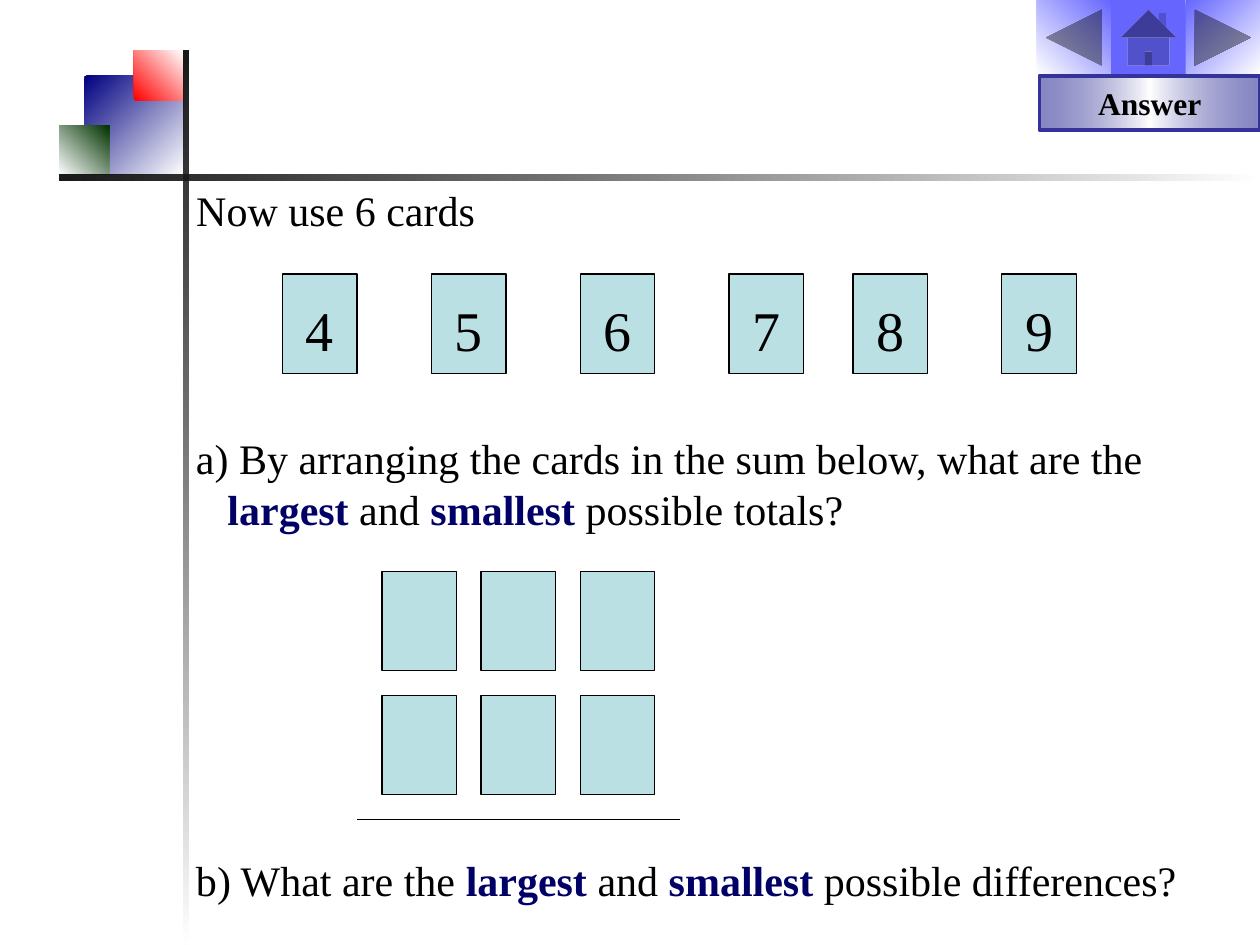
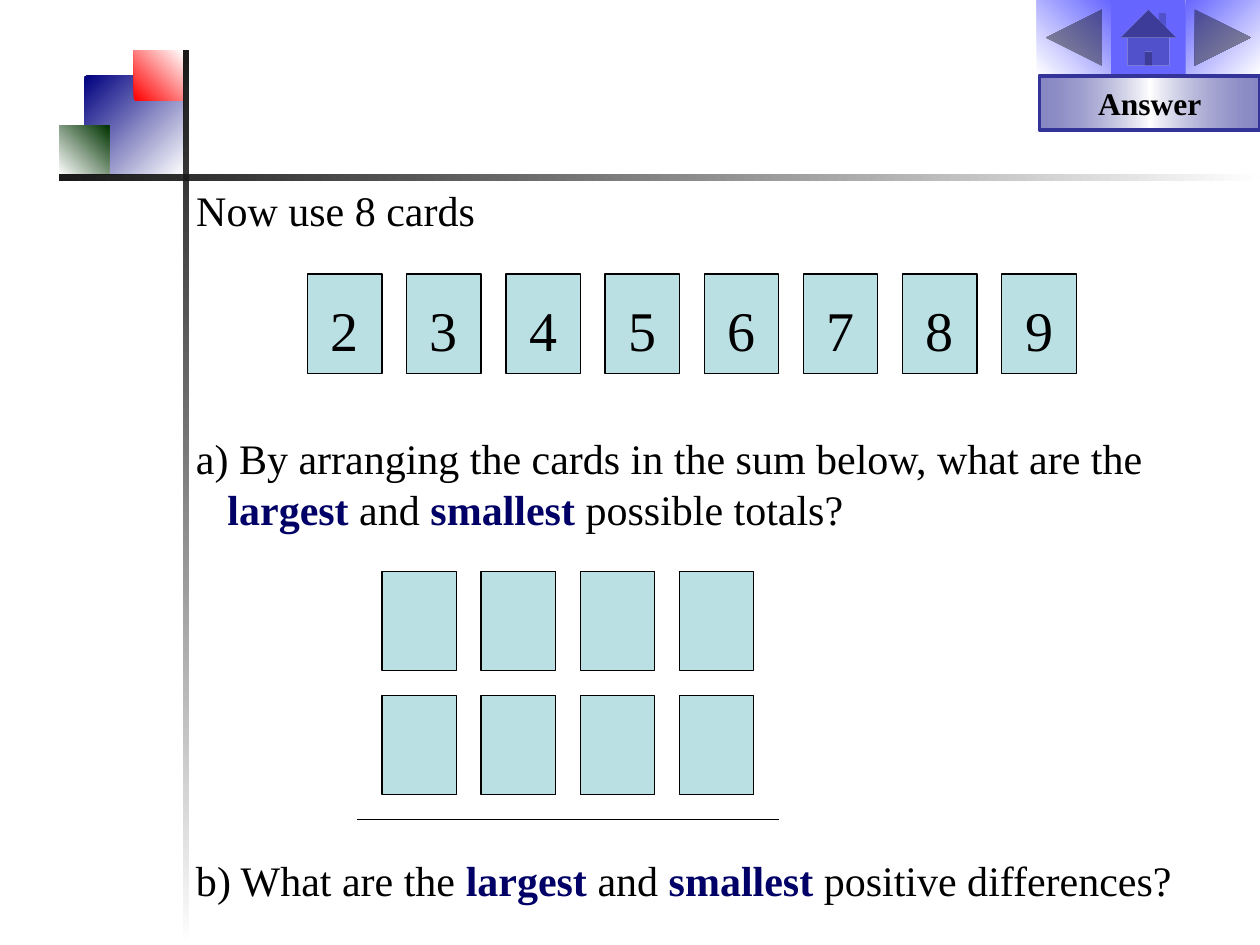
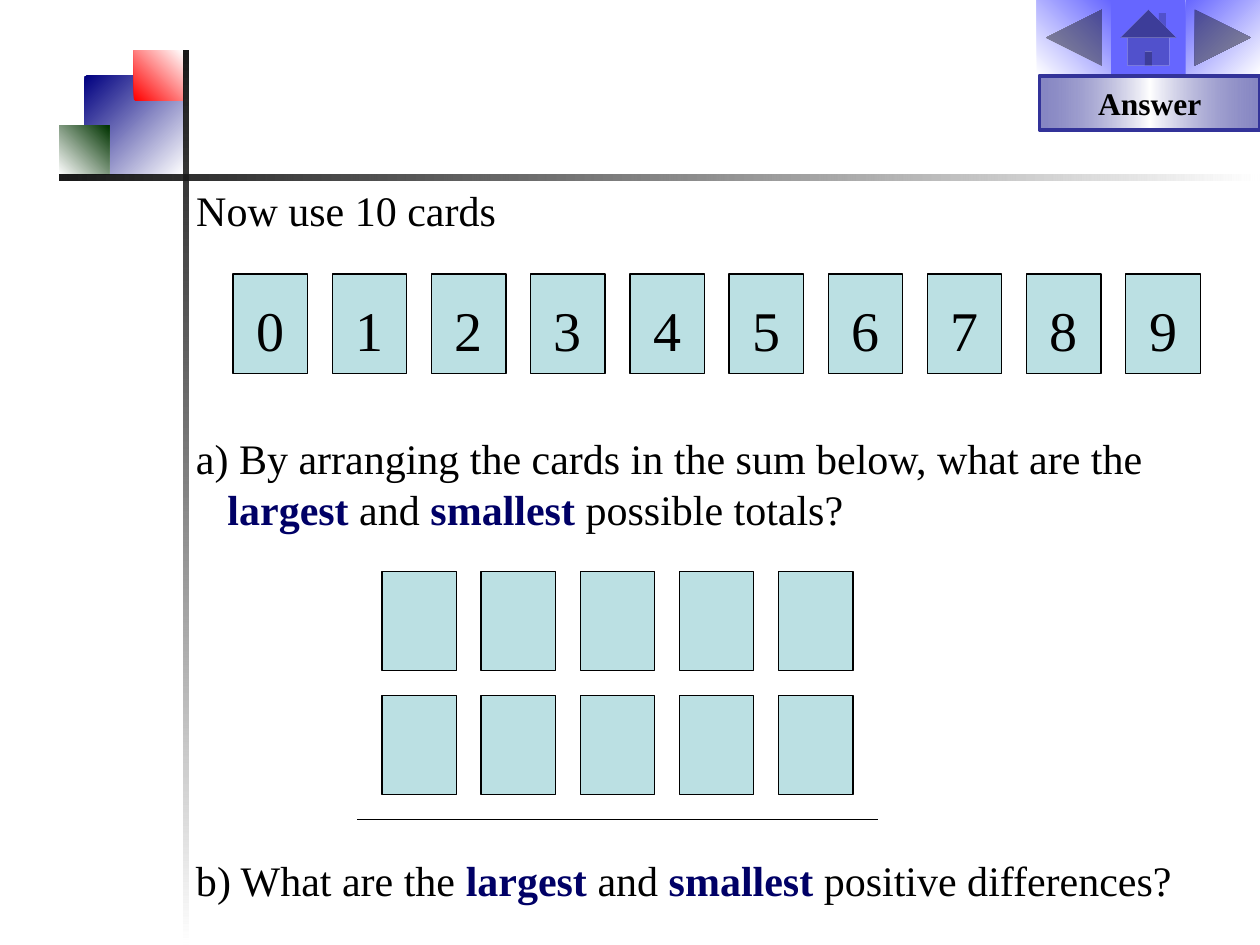
from dataclasses import dataclass

from lxml import etree
from pptx import Presentation, util as u
from pptx.dml.color import RGBColor
from pptx.enum import shapes, text
from pptx.oxml.ns import qn


@dataclass(frozen=True)
class Theme:
    """Colours, type sizes and the grid that all slides share."""
    font: str = "Times New Roman"
    ink: str = "000000"
    paper: str = "FFFFFF"
    emphasis: str = "000066"
    card: str = "BBE0E3"
    navy: str = "000080"
    red: str = "FF0000"
    green: str = "003300"
    navigation: str = "6666FF"
    answer: str = "333399"
    body_size: int = 24
    digit_size: int = 32
    button_size: int = 18
    hairline: float = 0.75
    unit: float = 14.17
    width: int = 720
    height: int = 540
    axis_x: float = 104.9
    axis_y: float = 99.94


THEME = Theme()
UNIT = THEME.unit
CARD_WIDTH, CARD_HEIGHT, CARD_PITCH, ROW_PITCH = 3 * UNIT, 4 * UNIT, 4 * UNIT, 5 * UNIT
KIND = shapes.MSO_SHAPE
TOTALS = "a) By arranging the cards in the sum below, what are the *largest* and *smallest* possible totals?"
DIFFERENCES = "b) What are the *largest* and *smallest* {} differences?"
TASKS = [
    (range(4, 10), [4, 10, 16, 22, 27, 33], "possible"),
    (range(2, 10), range(5, 37, 4), "positive"),
    (range(10), range(2, 42, 4), "positive"),
]


def write(frame, content, size=THEME.body_size, align=text.PP_ALIGN.LEFT, bold=False,
          anchor=text.MSO_ANCHOR.TOP, top=5.6, hang=0):
    """Write one paragraph, with the words between asterisks emphasised."""
    frame.word_wrap = True
    frame.auto_size = text.MSO_AUTO_SIZE.NONE
    frame.vertical_anchor = anchor
    frame.margin_left = frame.margin_right = u.Pt(7.2)
    frame.margin_top, frame.margin_bottom = u.Pt(top), u.Pt(3.6)
    paragraph = frame.paragraphs[0]
    paragraph.alignment = align
    if hang:
        properties = paragraph._p.get_or_add_pPr()
        properties.set("marL", str(u.Pt(hang)))
        properties.set("indent", str(-u.Pt(hang)))
    for index, part in enumerate(content.split("*")):
        emphasised = index % 2 == 1
        run = paragraph.add_run()
        run.text = part
        run.font.name = THEME.font
        run.font.size = u.Pt(size)
        run.font.bold = bold or emphasised
        run.font.color.rgb = RGBColor.from_string(THEME.emphasis if emphasised else THEME.ink)


def paint_gradient(shape, stops, angle):
    """Fill a shape with (position, colour, opacity) stops at an angle in degrees."""
    shape.fill.gradient()
    gradient = shape.element.spPr.find(qn("a:gradFill"))
    for child in list(gradient):
        gradient.remove(child)
    stop_list = etree.SubElement(gradient, qn("a:gsLst"))
    for position, colour, opacity in stops:
        stop = etree.SubElement(stop_list, qn("a:gs"), pos=str(position * 1000))
        tint = etree.SubElement(stop, qn("a:srgbClr"), val=colour)
        if opacity < 100:
            etree.SubElement(tint, qn("a:alpha"), val=str(opacity * 1000))
    etree.SubElement(gradient, qn("a:lin"), ang=str(angle * 60000), scaled="0")


def add_block(slide, left, top, width, height, kind=KIND.RECTANGLE, fill=None,
              stops=None, angle=0, line=None, weight=THEME.hairline):
    """Add a flat preset shape with a solid or gradient fill."""
    block = slide.shapes.add_shape(kind, u.Pt(left), u.Pt(top), u.Pt(width), u.Pt(height))
    block.shadow.inherit = False
    if stops:
        paint_gradient(block, stops, angle)
    else:
        block.fill.solid()
        block.fill.fore_color.rgb = RGBColor.from_string(fill)
    if line:
        block.line.color.rgb = RGBColor.from_string(line)
        block.line.width = u.Pt(weight)
    else:
        block.line.fill.background()
    return block


def draw_axes(slide, x, y):
    """Draw the three squares and the two fading bars around their crossing."""
    squares = [
        (-4, -4, 4, THEME.navy, THEME.paper, 45),
        (-2, -5, 2, THEME.red, THEME.paper, 315),
        (-5, -2, 2, THEME.paper, THEME.green, 315),
    ]
    parts = [add_block(slide, x + column * UNIT, y + row * UNIT, side * UNIT, side * UNIT,
                       stops=[(0, start, 100), (100, end, 100)], angle=angle)
             for column, row, side, start, end, angle in squares]
    fade = [(0, THEME.ink, 90), (100, THEME.paper, 100)]
    bar_top, bar_left = y - 5 * UNIT, x - 5 * UNIT
    parts.append(add_block(slide, x, bar_top, 3, THEME.height - bar_top, stops=fade, angle=90))
    parts.append(add_block(slide, bar_left, y, THEME.width - bar_left, 3, stops=fade))
    return parts


def draw_navigation(slide, right, top):
    """Draw the back, next and home buttons against the right edge."""
    side = 3 * UNIT
    back = [(0, THEME.paper, 100), (100, THEME.navigation, 100)]
    forward = [(0, THEME.navigation, 100), (100, THEME.paper, 100)]
    buttons = [
        (3, KIND.ACTION_BUTTON_BACK_OR_PREVIOUS, back, 315),
        (1, KIND.ACTION_BUTTON_FORWARD_OR_NEXT, forward, 45),
        (2, KIND.ACTION_BUTTON_HOME, None, 0),
    ]
    return [add_block(slide, right - place * side, top, side, 43, kind,
                      fill=THEME.navigation, stops=stops, angle=angle)
            for place, kind, stops, angle in buttons]


def move_to_layout(parts, layout):
    """Move drawn parts behind the placeholders of a layout."""
    for index, part in enumerate(parts):
        part.element.xpath("./p:nvSpPr/p:cNvPr")[0].set("id", str(100 + index))
        layout.shapes.element.insert(2 + index, part.element)


def add_question(slide, content, left, top, width, height, hang=0):
    """Add a question in a text box."""
    question = slide.shapes.add_textbox(u.Pt(left), u.Pt(top), u.Pt(width), u.Pt(height))
    write(question.text_frame, content, hang=hang)


def add_card(slide, left, top, digit=None):
    """Add a card, blank unless it has a digit."""
    card = add_block(slide, left, top, CARD_WIDTH, CARD_HEIGHT, fill=THEME.card, line=THEME.ink)
    if digit is not None:
        write(card.text_frame, str(digit), size=THEME.digit_size, align=text.PP_ALIGN.CENTER,
              anchor=text.MSO_ANCHOR.MIDDLE, top=9.2)


def add_sum(slide, columns, left, top):
    """Add two rows of blank cards above the rule of the sum."""
    for row in range(2):
        for column in range(columns):
            add_card(slide, left + column * CARD_PITCH, top + row * ROW_PITCH)
    rule_y = u.Pt(top + 2 * ROW_PITCH)
    rule = slide.shapes.add_connector(
        shapes.MSO_CONNECTOR.STRAIGHT, u.Pt(left - UNIT), rule_y,
        u.Pt(left + columns * CARD_PITCH), rule_y)
    rule.line.color.rgb = RGBColor.from_string(THEME.ink)
    rule.line.width = u.Pt(THEME.hairline)
    etree.SubElement(rule.element.spPr, qn("a:effectLst"))


def add_answer_button(slide, right, top, width=126, height=31):
    """Add the answer button against the right edge."""
    stops = [(0, THEME.answer, 59), (50, THEME.paper, 100), (100, THEME.answer, 59)]
    button = add_block(slide, right - width, top, width, height,
                       stops=stops, line=THEME.answer, weight=2.25)
    write(button.text_frame, "Answer", size=THEME.button_size, bold=True, top=3.6,
          align=text.PP_ALIGN.CENTER, anchor=text.MSO_ANCHOR.MIDDLE)


def build_task(slide, digits, places, difference, x, y):
    """Lay out one card task from the crossing of the bars."""
    title = slide.shapes.title
    title.left, title.top, title.width, title.height = map(u.Pt, (x, y, 569, 36))
    write(title.text_frame, f"Now use {len(digits)} cards")
    for digit, place in zip(digits, places):
        add_card(slide, x + place * UNIT, y + 4 * UNIT, digit)
    add_question(slide, TOTALS, x, y + 10 * UNIT, 569, 65, hang=18)
    add_sum(slide, len(digits) // 2, x + 8 * UNIT, y + 16 * UNIT)
    add_question(slide, DIFFERENCES.format(difference), x, y + 27 * UNIT, THEME.width - x, 36)
    add_answer_button(slide, THEME.width, y - 4 * UNIT)


def main():
    """Build the deck and save it."""
    deck = Presentation()
    deck.slide_width, deck.slide_height = u.Pt(THEME.width), u.Pt(THEME.height)
    layout = deck.slide_layouts[5]
    task_slides = [deck.slides.add_slide(layout) for _ in TASKS]
    shared = draw_axes(task_slides[0], THEME.axis_x, THEME.axis_y)
    shared += draw_navigation(task_slides[0], THEME.width, 0)
    move_to_layout(shared, layout)
    for slide, task in zip(task_slides, TASKS):
        build_task(slide, *task, THEME.axis_x, THEME.axis_y)
    deck.save("out.pptx")


if __name__ == "__main__":
    main()
